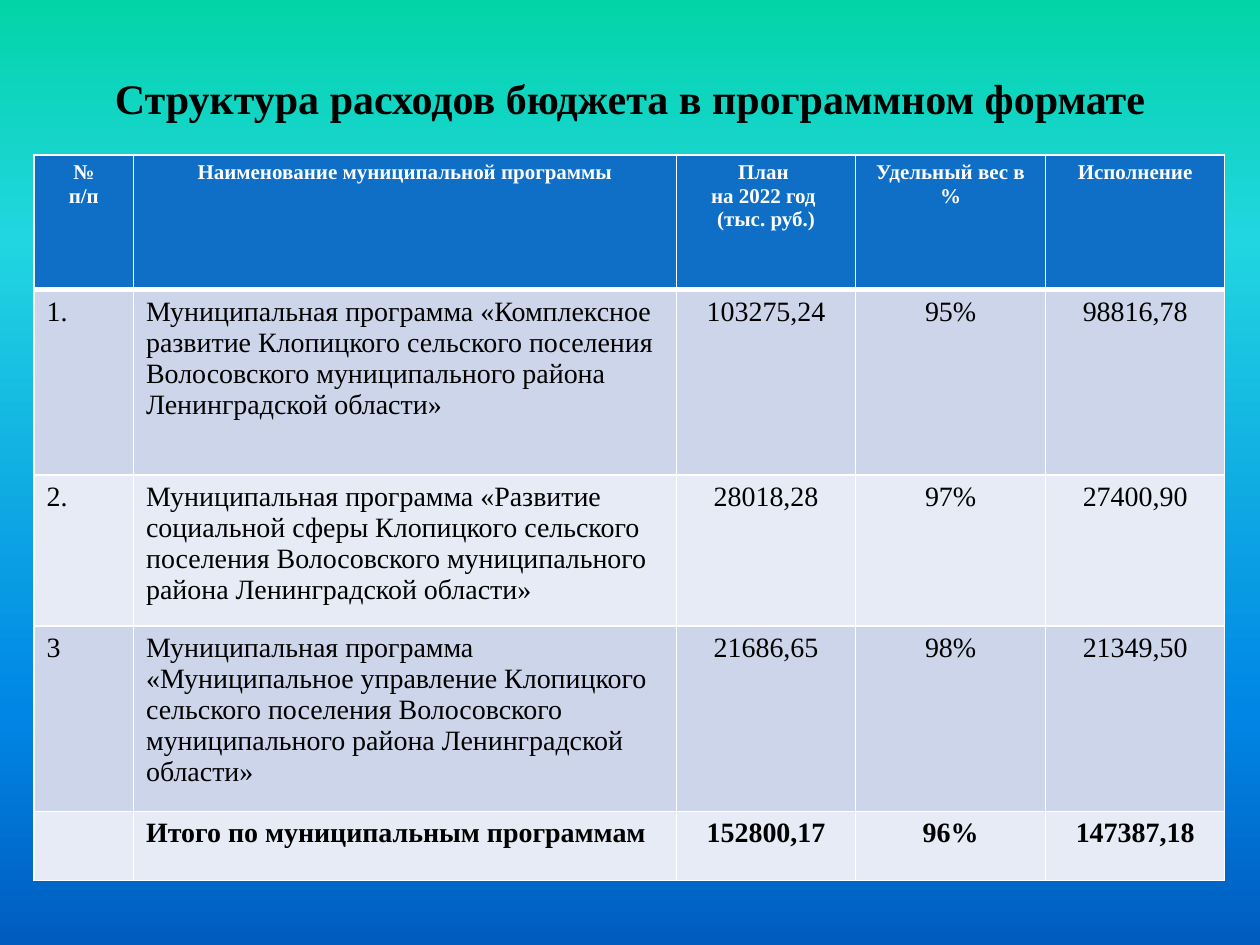
from lxml import etree
from pptx import Presentation
from pptx import util as u
from pptx.dml.color import RGBColor
from pptx.enum import text as t
from pptx.oxml import ns

WHITE = RGBColor(0xFF, 0xFF, 0xFF)
BLACK = RGBColor(0, 0, 0)
BLUE = RGBColor(0x0F, 0x6F, 0xC6)
BANDS = [RGBColor(0xCC, 0xD5, 0xEA), RGBColor(0xE7, 0xEB, 0xF5)]
SKY = [
    (0, RGBColor(0x03, 0xD4, 0xA8)),
    (25, RGBColor(0x21, 0xD6, 0xE0)),
    (75, RGBColor(0x00, 0x87, 0xE6)),
    (100, RGBColor(0x00, 0x5C, 0xBF)),
]
FONT = "Times New Roman"
WIDE, HIGH = u.Inches(10), u.Inches(7.5)
COLS = [0.79, 4.31, 1.42, 1.51, 1.42]
ROWS = [1.07, 1.47, 1.2, 1.47, 0.55]
HEADS = [
    "№\nп/п",
    "Наименование муниципальной программы",
    "План \nна 2022 год \n(тыс. руб.)",
    "Удельный вес в %",
    "Исполнение",
]
PLANS = [
    ["1.", "Муниципальная программа «Комплексное развитие Клопицкого сельского "
     "поселения Волосовского муниципального района Ленинградской области»",
     "103275,24", "95%", "98816,78"],
    ["2.", "Муниципальная программа «Развитие социальной сферы Клопицкого сельского "
     "поселения Волосовского муниципального района Ленинградской области»",
     "28018,28", "97%", "27400,90"],
    ["3", "Муниципальная программа «Муниципальное управление Клопицкого сельского "
     "поселения Волосовского муниципального района Ленинградской области»",
     "21686,65", "98%", "21349,50"],
]
TOTAL = ["", "Итого по муниципальным программам", "152800,17", "96%", "147387,18"]


def paint_sky(slide):
    fill = slide.background.fill
    fill.gradient()
    fill.gradient_angle = 270
    stops = slide.element.find(".//" + ns.qn("a:gsLst"))
    for old in list(stops):
        stops.remove(old)
    for share, color in SKY:
        stop = etree.SubElement(stops, ns.qn("a:gs"), pos=str(share * 1000))
        etree.SubElement(stop, ns.qn("a:srgbClr"), val=str(color))


def write(frame, words, size, color, bold, align):
    frame.text = words
    for para in frame.paragraphs:
        para.alignment = align
        for run in para.runs:
            font = run.font
            font.name, font.size, font.bold = FONT, u.Pt(size), bold
            font.color.rgb = color


def add_title(slide, box):
    frame = slide.shapes.add_textbox(*box).text_frame
    frame.word_wrap = True
    frame.vertical_anchor = t.MSO_ANCHOR.BOTTOM
    frame.margin_left = frame.margin_right = frame.margin_bottom = 0
    write(frame, "Структура расходов бюджета в программном формате",
          24, BLACK, True, t.PP_ALIGN.CENTER)


def add_edges(cell, row):
    props = cell._tc.get_or_add_tcPr()
    thick = {0: "B", 1: "T"}.get(row)
    for side in "LRTB":
        width = u.Pt(3 if side == thick else 1)
        line = etree.SubElement(props, ns.qn("a:ln" + side), w=str(width))
        fill = etree.SubElement(line, ns.qn("a:solidFill"))
        etree.SubElement(fill, ns.qn("a:srgbClr"), val=str(WHITE))


def add_budget(slide, box):
    left, top, wide, high = box
    data = [HEADS, *PLANS, TOTAL]
    table = slide.shapes.add_table(len(data), len(COLS), *box).table
    for col, part in zip(table.columns, COLS):
        col.width = int(wide * part / sum(COLS))
    for row, part in zip(table.rows, ROWS):
        row.height = int(high * part / sum(ROWS))
    for r, line in enumerate(data):
        head = r == 0
        for c, words in enumerate(line):
            cell = table.cell(r, c)
            add_edges(cell, r)
            cell.fill.solid()
            cell.fill.fore_color.rgb = BLUE if head else BANDS[(r - 1) % 2]
            mid = head or c > 1
            write(cell.text_frame, words, 12 if head else 16,
                  WHITE if head else BLACK, head or line is TOTAL,
                  t.PP_ALIGN.CENTER if mid else t.PP_ALIGN.LEFT)


def share(x, y, w, h):
    return int(WIDE * x), int(HIGH * y), int(WIDE * w), int(HIGH * h)


def main():
    deck = Presentation()
    deck.slide_width, deck.slide_height = WIDE, HIGH
    slide = deck.slides.add_slide(deck.slide_layouts[6])
    paint_sky(slide)
    add_title(slide, share(0.05, 0.06, 0.9, 0.07))
    add_budget(slide, share(0.027, 0.164, 0.945, 0.768))
    deck.save("out.pptx")


if __name__ == "__main__":
    main()
